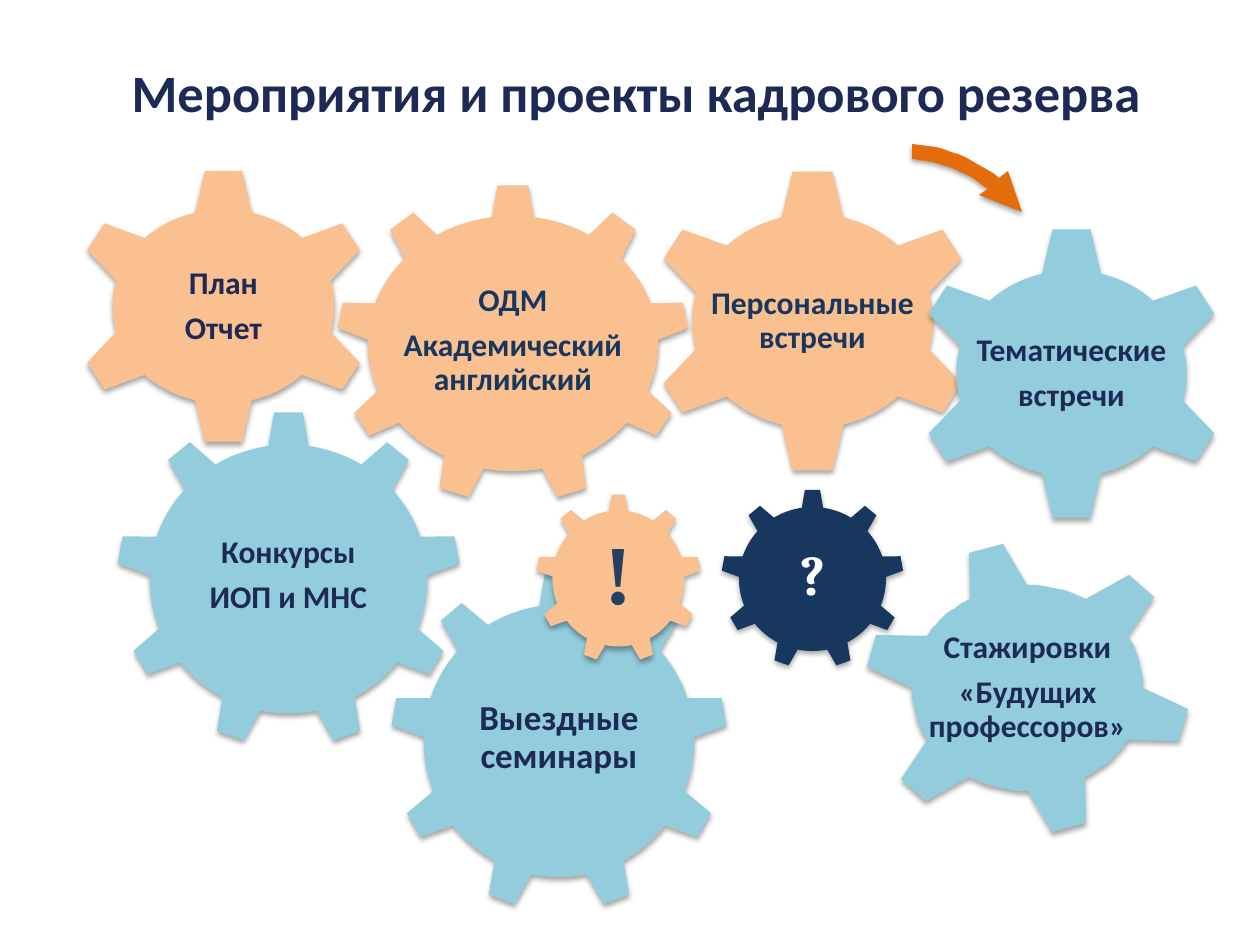
from lxml.etree import SubElement as Sub
from pptx import Presentation
from pptx.dml.color import RGBColor as Rgb
from pptx.enum.shapes import MSO_SHAPE as Kind
from pptx.enum.text import MSO_ANCHOR as Anchor, PP_ALIGN as Align
from pptx.oxml.ns import qn
from pptx.util import Emu, Pt

PX = 914400 / 126
HUES = {
    "peach": "FAC090",
    "sky": "93CDDD",
    "deep": "17375E",
    "steel": "254061",
    "navy": "1C2A55",
    "rust": "E46C0A",
    "white": "FFFFFF",
}


def paint(shape, hue):
    shape.fill.solid()
    shape.fill.fore_color.rgb = Rgb.from_string(HUES[hue])
    shape.line.fill.background()
    shape.shadow.inherit = False
    glow = Sub(shape._element.spPr.find(qn("a:effectLst")), qn("a:outerShdw"),
               blurRad=str(Pt(3.1)), dist=str(Pt(1.8)), dir="5400000", rotWithShape="0")
    tint = Sub(glow, qn("a:srgbClr"), val="000000")
    Sub(tint, qn("a:alpha"), val="35000")


def write(shape, lines, size, face, hue, pad):
    frame = shape.text_frame
    frame.word_wrap = True
    frame.vertical_anchor = Anchor.MIDDLE
    frame.margin_left = frame.margin_right = round(pad * PX)
    frame.margin_top = frame.margin_bottom = 0
    frame.text = "\n".join(lines)
    for para in frame.paragraphs:
        para.alignment = Align.CENTER
        para.line_spacing = 0.9
        para.space_after = Pt(size * 0.35)
        para.font.size = Pt(size)
        para.font.name = face
        para.font.bold = True
        para.font.color.rgb = Rgb.from_string(HUES[hue])


deck = Presentation()
deck.slide_width = Emu(round(1260 * PX))
deck.slide_height = Emu(round(945 * PX))
slide = deck.slides.add_slide(deck.slide_layouts[5])
shapes = slide.shapes

title = shapes.title
title.left, title.top, title.width, title.height = [round(n * PX) for n in (119, 54, 1053, 77)]
title.text_frame.text = "Мероприятия и проекты кадрового резерва"
title.text_frame.vertical_anchor = Anchor.TOP
head = title.text_frame.paragraphs[0]
head.alignment = Align.LEFT
head.font.size = Pt(30)
head.font.name = "Calibri"
head.font.bold = True
head.font.color.rgb = Rgb.from_string(HUES["navy"])

SIX, NINE = Kind.GEAR_6, Kind.GEAR_9
gears = [
    (NINE, (116, 411, 345, 336), "sky", ["Конкурсы", "ИОП и МНС"], 18, "Calibri", "navy"),
    (SIX, (646, 168, 333, 306), "peach", ["Персональные встречи"], 18, "Calibri", "deep"),
    (NINE, (336, 184, 354, 319), "peach", ["ОДМ", "Академический английский"], 18, "Calibri", "deep"),
    (SIX, (912, 226, 319, 295), "sky", ["Тематические", "встречи"], 18, "Calibri", "navy"),
    (NINE, (390, 571, 338, 340), "sky", ["Выездные семинары"], 20, "Calibri", "navy"),
    (NINE, (536, 494, 165, 169), "peach", ["!"], 48, "Times New Roman", "steel"),
    (NINE, (721, 489, 183, 180), "deep", ["?"], 32, "Cambria", "white"),
    (SIX, (71, 168, 305, 277), "peach", ["План", "Отчет"], 18, "Calibri", "navy"),
]
for kind, box, fill, lines, size, face, hue in gears:
    gear = shapes.add_shape(kind, *[round(n * PX) for n in box])
    paint(gear, fill)
    write(gear, lines, size, face, hue, -26)

STEPS = 12
arcs = []
for curve in (
    [(912, 144), (944, 146), (974, 158), (999, 178)],
    [(988, 189), (966, 171), (939, 161), (912, 159)],
    [(1128, 636), (1138, 651), (1143, 670), (1143, 688)],
    [(1128, 740), (1118, 756), (1102, 769), (1085, 777)],
    [(1028, 791), (1007, 791), (987, 786), (969, 777)],
):
    arc = []
    for step in range(STEPS + 1):
        t = step / STEPS
        parts = ((1 - t) ** 3, 3 * t * (1 - t) ** 2, 3 * t * t * (1 - t), t ** 3)
        arc.append(tuple(sum(k * p[i] for k, p in zip(parts, curve)) for i in (0, 1)))
    arcs.append(arc)
outer, inner, east, south, base = arcs

arrow = outer + [(1008, 171), (1022, 212), (979, 195)] + inner
half = [(1129, 575), (1154, 597)] + east + [(1188, 709), (1179, 741)] + south + [(1086, 823), (1052, 832)] + base
wheel = half + [(2055 - x, 1376 - y) for x, y in half]
drawn = []
for points, hue in ((arrow, "rust"), (wheel, "sky")):
    pen = shapes.build_freeform(*points[0], scale=PX)
    pen.add_line_segments(points[1:], close=True)
    drawn.append(pen.convert_to_shape())
    paint(drawn[-1], hue)
write(drawn[1], ["Стажировки", "«Будущих профессоров»"], 18, "Calibri", "navy", 40)

deck.save("out.pptx")
